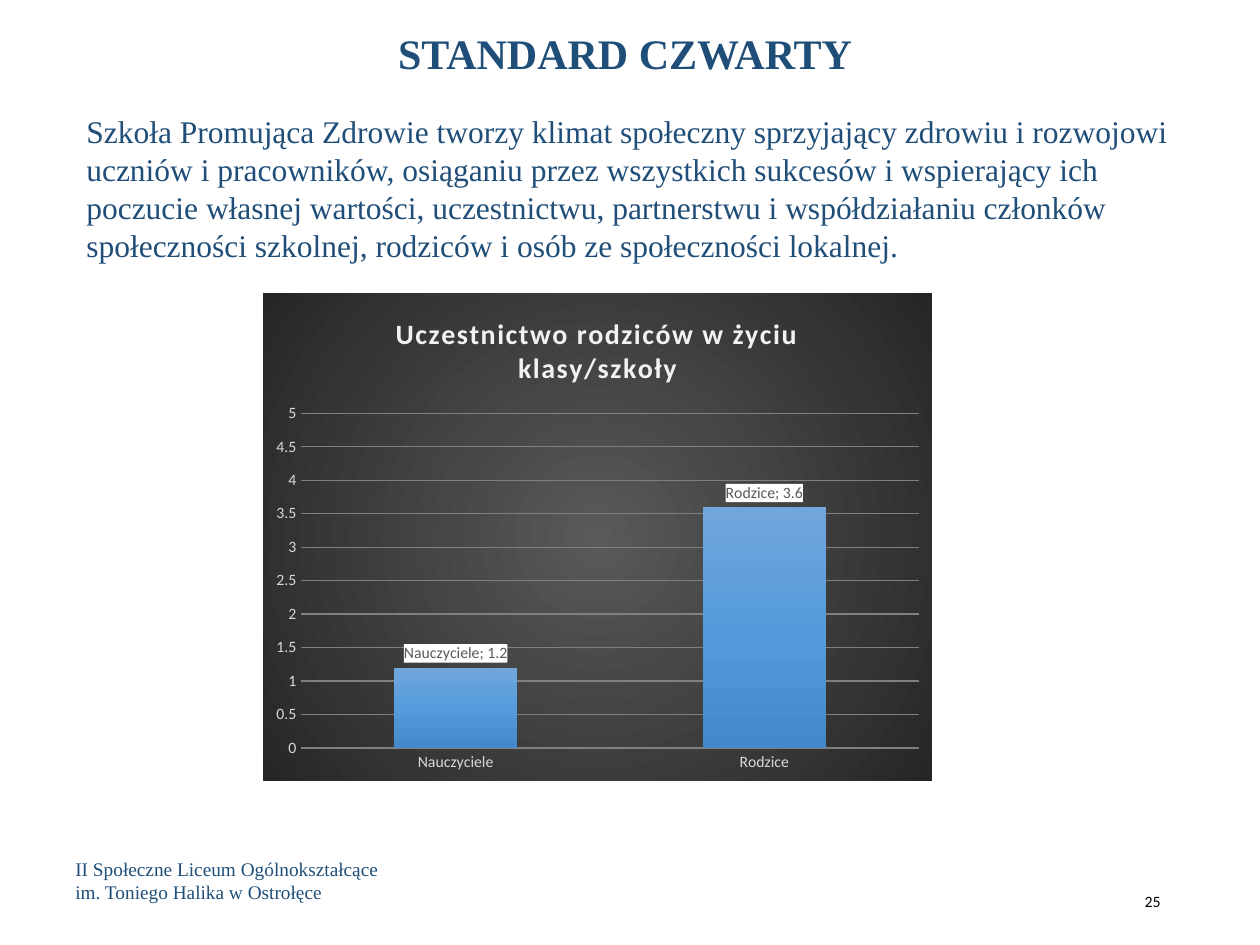
from lxml import etree
from pptx import Presentation
from pptx.chart.data import CategoryChartData
from pptx.dml.color import RGBColor
from pptx.enum.chart import XL_CHART_TYPE as CT, XL_LABEL_POSITION as LP, XL_TICK_MARK as TM
from pptx.enum.text import MSO_ANCHOR as MA, PP_ALIGN as PA
from pptx.oxml import parse_xml
from pptx.oxml.ns import nsdecls, qn
from pptx.util import Pt

SCALE = 914400 / 126
NAVY = "1F4E79"
SERIF = "Times New Roman"
NS = nsdecls("a", "c")
BODY = ("Szkoła Promująca Zdrowie tworzy klimat społeczny sprzyjający zdrowiu i rozwojowi "
        "uczniów i pracowników, osiąganiu przez wszystkich sukcesów i wspierający ich "
        "poczucie własnej wartości, uczestnictwu, partnerstwu i współdziałaniu członków "
        "społeczności szkolnej, rodziców i osób ze społeczności lokalnej.")
FOOTER = "II Społeczne Liceum Ogólnokształcące im. Toniego Halika w Ostrołęce"


def px(n):
    """Turn pixels into EMU."""
    return round(n * SCALE)


def color(hex_code):
    """Turn a hex string into a colour."""
    return RGBColor.from_string(hex_code)


def style(font, size, hex_code, name="Calibri", bold=False):
    """Set the size, face, weight and colour of a font."""
    for key, value in {"size": Pt(size), "name": name, "bold": bold}.items():
        setattr(font, key, value)
    font.color.rgb = color(hex_code)


def gradient(stops, direction):
    """Return gradient fill XML from (percent, hex) stops."""
    items = "".join(f'<a:gs pos="{pos * 1000}"><a:srgbClr val="{c}"/></a:gs>' for pos, c in stops)
    return f"<a:gradFill {NS}><a:gsLst>{items}</a:gsLst>{direction}</a:gradFill>"


def shape_props(fill):
    """Return borderless chart shape properties with the given fill."""
    return parse_xml(f"<c:spPr {NS}>{fill}<a:ln><a:noFill/></a:ln></c:spPr>")


def add_text(slide, box, text, size, hex_code=NAVY, name=SERIF, bold=False,
             align=PA.LEFT, anchor=MA.MIDDLE, spacing=1.0):
    """Add a one-paragraph text box."""
    tf = slide.shapes.add_textbox(*map(px, box)).text_frame
    tf.word_wrap, tf.vertical_anchor = True, anchor
    p = tf.paragraphs[0]
    p.alignment, p.line_spacing = align, spacing
    r = p.add_run()
    r.text = text
    style(r.font, size, hex_code, name, bold)


def format_axes(chart):
    """Style both axes and the gridlines."""
    for axis in (chart.category_axis, chart.value_axis):
        axis.major_tick_mark = axis.minor_tick_mark = TM.NONE
        axis.format.line.fill.background()
        style(axis.tick_labels.font, 9, "D9D9D9")
    axis = chart.value_axis
    for key, value in {"minimum_scale": 0, "maximum_scale": 5, "major_unit": 0.5}.items():
        setattr(axis, key, value)
    line = axis.major_gridlines.format.line
    line.color.rgb, line.width = color("808080"), Pt(0.75)


def format_labels(series):
    """Show category and value on white labels above the columns."""
    labels = series.data_labels
    for key, value in {"show_value": True, "show_category_name": True,
                       "position": LP.OUTSIDE_END}.items():
        setattr(labels, key, value)
    style(labels.font, 9, "595959")
    xml = labels._element
    white = '<a:solidFill><a:srgbClr val="FFFFFF"/></a:solidFill>'
    xml.find(qn("c:txPr")).addprevious(shape_props(white))
    separator = etree.Element(qn("c:separator"))
    separator.text = "; "
    xml.find(qn("c:showBubbleSize")).addnext(separator)


def add_participation_chart(slide, box):
    """Add the column chart of parents' participation."""
    data = CategoryChartData()
    data.categories = ["Nauczyciele", "Rodzice"]
    data.add_series("Series 1", (1.2, 3.6))
    chart = slide.shapes.add_chart(CT.COLUMN_CLUSTERED, *map(px, box), data).chart
    chart.has_legend = False
    style(chart.font, 10, "000000")

    chart.has_title = True
    r = chart.chart_title.text_frame.paragraphs[0].add_run()
    r.text = "Uczestnictwo rodziców w życiu klasy/szkoły"
    style(r.font, 16, "F2F2F2", bold=True)
    r.font._element.set("spc", "100")
    chart.chart_title.include_in_layout = False

    format_axes(chart)
    plot = chart.plots[0]
    plot.gap_width, plot.vary_by_categories = 150, False
    series = plot.series[0]
    series.format.line.fill.background()
    bars = gradient([(0, "71A6DB"), (50, "559BDB"), (100, "448ACA")],
                    '<a:lin ang="5400000" scaled="0"/>')
    series._element.find(qn("c:spPr")).insert(0, parse_xml(bars))
    format_labels(series)

    backdrop = gradient([(0, "595959"), (100, "262626")],
                        '<a:path path="circle"><a:fillToRect l="50000" t="50000" '
                        'r="50000" b="50000"/></a:path>')
    chart._chartSpace.find(qn("c:chart")).addnext(shape_props(backdrop))


def add_footer(slide, left, top):
    """Add the school name and the page number."""
    add_text(slide, (left, top, 353, 39), FOOTER, 11)
    add_text(slide, (left + 827, top + 15, 283, 50), "25", 9, "000000", "Calibri", align=PA.RIGHT)


def build_slide(prs):
    """Lay out the whole slide."""
    slide = prs.slides.add_slide(prs.slide_layouts[6])
    add_text(slide, (218, 6, 814, 100), "STANDARD CZWARTY", 24, bold=True,
             align=PA.CENTER, spacing=0.9)
    add_text(slide, (74, 106, 1131, 165), BODY, 18, anchor=MA.TOP)
    add_participation_chart(slide, (263, 293, 669, 488))
    add_footer(slide, 63, 861)


def main():
    """Build and save the presentation."""
    prs = Presentation()
    prs.slide_width, prs.slide_height = px(1260), px(945)
    build_slide(prs)
    prs.save("out.pptx")


if __name__ == "__main__":
    main()
